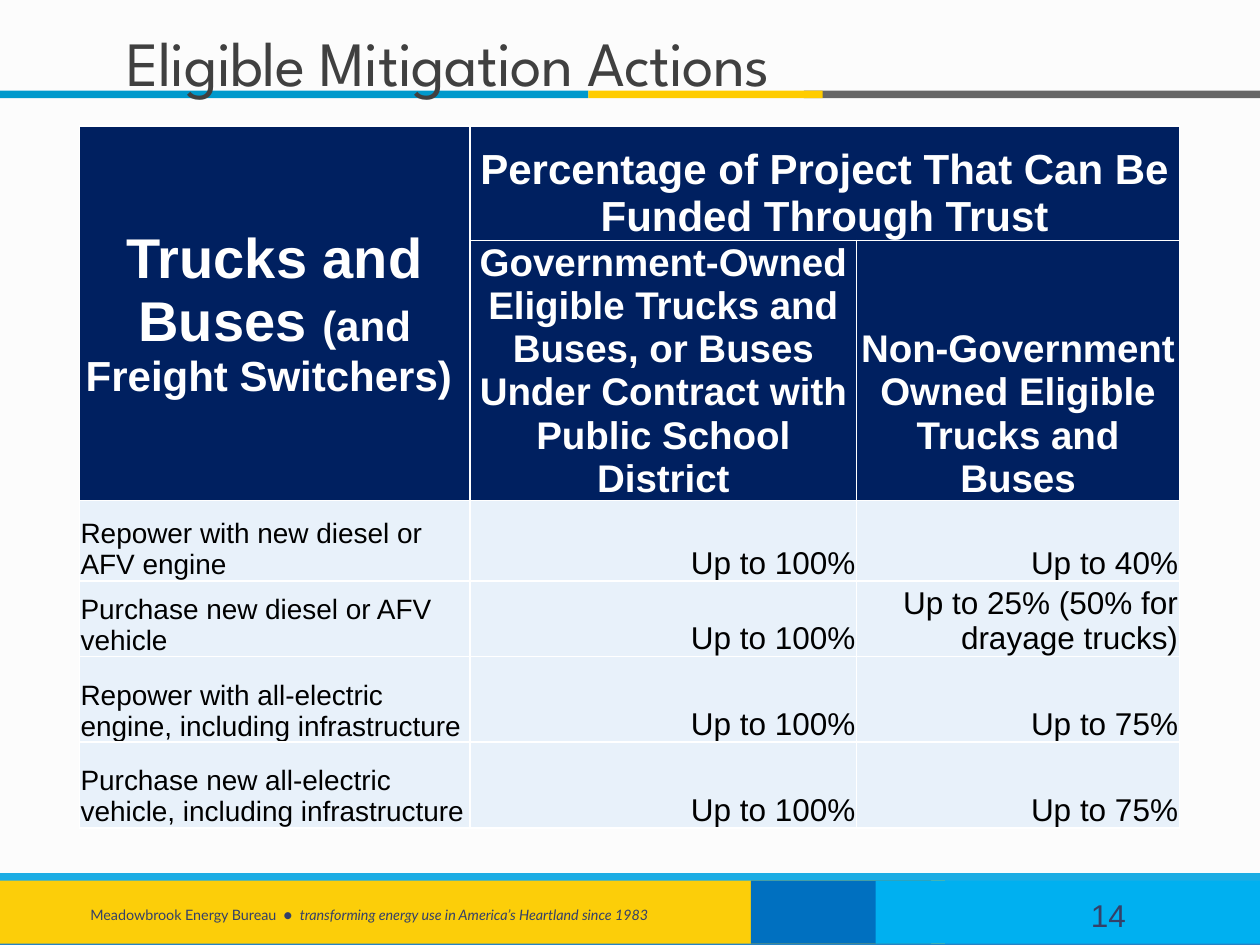
from dataclasses import dataclass
import pptx
import pptx.dml.color
import pptx.enum.shapes
import pptx.enum.text
import pptx.oxml
import pptx.oxml.ns
import pptx.util

Anchor = pptx.enum.text.MSO_ANCHOR
Align = pptx.enum.text.PP_ALIGN
COLS, ROWS = 1000, 750
COLORS = {
    "paper": "FCFCFC", "base": "2683C6", "stripe": "1CADE4", "gold": "FCCE09",
    "blue": "0070C0", "sky": "00B0F0", "rule_blue": "0099CC", "rule_gray": "666666",
    "rule_gold": "FFCC00", "footer": "344068", "title": "404040", "navy": "002060",
    "pale": "E8F1FA", "white": "FFFFFF", "black": "000000",
}

prs = pptx.Presentation()
prs.slide_width = pptx.util.Inches(10)
prs.slide_height = pptx.util.Inches(7.5)


@dataclass
class Box:
    col: int
    row: int
    cols: int
    rows: int


@dataclass
class Band:
    box: Box
    color: str


@dataclass
class Run:
    text: str
    size: float
    color: str
    font: str = "Arial"
    bold: bool = False
    italic: bool = False


@dataclass
class Entry:
    row: int
    col: int
    runs: list[Run]
    fill: str
    align: Align
    anchor: Anchor = Anchor.BOTTOM


BANDS = [
    Band(Box(0, 700, 1000, 50), "base"),
    Band(Box(0, 693, 1000, 7), "stripe"),
    Band(Box(0, 699, 750, 50), "gold"),
    Band(Box(596, 699, 143, 50), "blue"),
    Band(Box(695, 699, 305, 50), "sky"),
    Band(Box(0, 72, 467, 6), "rule_blue"),
    Band(Box(638, 72, 362, 6), "rule_gray"),
    Band(Box(467, 72, 186, 6), "rule_gold"),
]
BANDS[3].box = Box(596, 699, 143, 50)
TABLE = Box(63, 100, 873, 548)
COL_WIDTHS = [310, 307, 256]
ROW_HEIGHTS = [91, 196, 64, 60, 68, 68]
ACTIONS = [
    ("Repower with new diesel or AFV engine", "Up to 100%", "Up to 40%"),
    ("Purchase new diesel or AFV vehicle", "Up to 100%", "Up to 25% (50% for drayage trucks)"),
    ("Repower with all-electric engine, including infrastructure", "Up to 100%", "Up to 75%"),
    ("Purchase new all-electric vehicle, including infrastructure", "Up to 100%", "Up to 75%"),
]


def across(n: int) -> int:
    return round(prs.slide_width * n / COLS)


def down(n: int) -> int:
    return round(prs.slide_height * n / ROWS)


def place(box: Box) -> tuple[int, int, int, int]:
    return across(box.col), down(box.row), across(box.cols), down(box.rows)


def rgb(name: str) -> pptx.dml.color.RGBColor:
    return pptx.dml.color.RGBColor.from_string(COLORS[name])


def draw_band(slide, band: Band) -> None:
    sp = slide.shapes.add_shape(pptx.enum.shapes.MSO_SHAPE.RECTANGLE, *place(band.box))
    sp.shadow.inherit = False
    sp.fill.solid()
    sp.fill.fore_color.rgb = rgb(band.color)
    sp.line.fill.background()


def write(tf, runs: list[Run], align: Align, anchor: Anchor) -> None:
    tf.word_wrap = True
    tf.vertical_anchor = anchor
    p = tf.paragraphs[0]
    p.alignment = align
    for run in runs:
        r = p.add_run()
        r.text = run.text
        r.font.name = run.font
        r.font.size = pptx.util.Pt(run.size)
        r.font.bold = run.bold
        r.font.italic = run.italic
        r.font.color.rgb = rgb(run.color)


def draw_text(slide, box: Box, runs: list[Run]) -> None:
    sp = slide.shapes.add_textbox(*place(box))
    write(sp.text_frame, runs, Align.LEFT, Anchor.MIDDLE)


def draw_title(slide, box: Box, run: Run) -> None:
    sp = slide.shapes.title
    sp.left, sp.top, sp.width, sp.height = place(box)
    tf = sp.text_frame
    tf.auto_size = pptx.enum.text.MSO_AUTO_SIZE.NONE
    write(tf, [run], Align.LEFT, Anchor.BOTTOM)
    p = tf.paragraphs[0]
    p.line_spacing = 0.85
    p.runs[0].font._element.set("spc", "-40")


def draw_borders(cell) -> None:
    tcPr = cell._tc.get_or_add_tcPr()
    for i, side in enumerate(("lnL", "lnR", "lnT", "lnB")):
        tcPr.insert(i, pptx.oxml.parse_xml(
            f'<a:{side} {pptx.oxml.ns.nsdecls("a")} w="12700"><a:solidFill>'
            f'<a:srgbClr val="{COLORS["white"]}"/></a:solidFill></a:{side}>'))


def table_entries() -> list[Entry]:
    def heading(row: int, col: int, text: str, size: int) -> Entry:
        return Entry(row, col, [Run(text, size, "white", bold=True)], "navy", Align.CENTER)

    corner = heading(0, 0, "Trucks and Buses ", 32)
    corner.runs.append(Run("(and Freight Switchers) ", 24, "white", bold=True))
    corner.anchor = Anchor.MIDDLE
    entries = [
        corner,
        heading(0, 1, "Percentage of Project That Can Be Funded Through Trust", 24),
        heading(1, 1, "Government-Owned Eligible Trucks and Buses, or Buses "
                      "Under Contract with Public School District", 22),
        heading(1, 2, "Non-Government Owned Eligible Trucks and Buses", 22),
    ]
    for row, action in enumerate(ACTIONS, start=2):
        for col, text in enumerate(action):
            size, align = (18, Align.RIGHT) if col else (16, Align.LEFT)
            entries.append(Entry(row, col, [Run(text, size, "black")], "pale", align))
    return entries


def draw_table(slide, box: Box, entries: list[Entry]) -> None:
    table = slide.shapes.add_table(len(ROW_HEIGHTS), len(COL_WIDTHS), *place(box)).table
    for column, width in zip(table.columns, COL_WIDTHS):
        column.width = across(width)
    for row, height in zip(table.rows, ROW_HEIGHTS):
        row.height = down(height)
    table.cell(0, 0).merge(table.cell(1, 0))
    table.cell(0, 1).merge(table.cell(0, 2))
    for cell in table.iter_cells():
        draw_borders(cell)
    for entry in entries:
        cell = table.cell(entry.row, entry.col)
        cell.fill.solid()
        cell.fill.fore_color.rgb = rgb(entry.fill)
        cell.margin_left = cell.margin_right = across(1)
        cell.margin_top, cell.margin_bottom = down(1), 0
        cell.vertical_anchor = entry.anchor
        write(cell.text_frame, entry.runs, entry.align, None)


def main() -> None:
    slide = prs.slides.add_slide(prs.slide_layouts[5])
    slide.background.fill.solid()
    slide.background.fill.fore_color.rgb = rgb("paper")
    for band in BANDS:
        draw_band(slide, band)
    draw_text(slide, Box(62, 706, 493, 40), [
        Run("Meadowbrook Energy Bureau  ●  ", 8.2, "footer", "Lato"),
        Run("transforming energy use in America’s Heartland since 1983", 8.2, "footer", "Lato", italic=True),
    ])
    draw_text(slide, Box(856, 706, 120, 40), [Run("14", 18, "footer")])
    draw_title(slide, Box(90, 6, 825, 78), Run("Eligible Mitigation Actions", 36, "title", "League Spartan"))
    slide.shapes._spTree.append(slide.shapes.title._element)
    draw_table(slide, TABLE, table_entries())
    prs.save("out.pptx")


if __name__ == "__main__":
    main()
